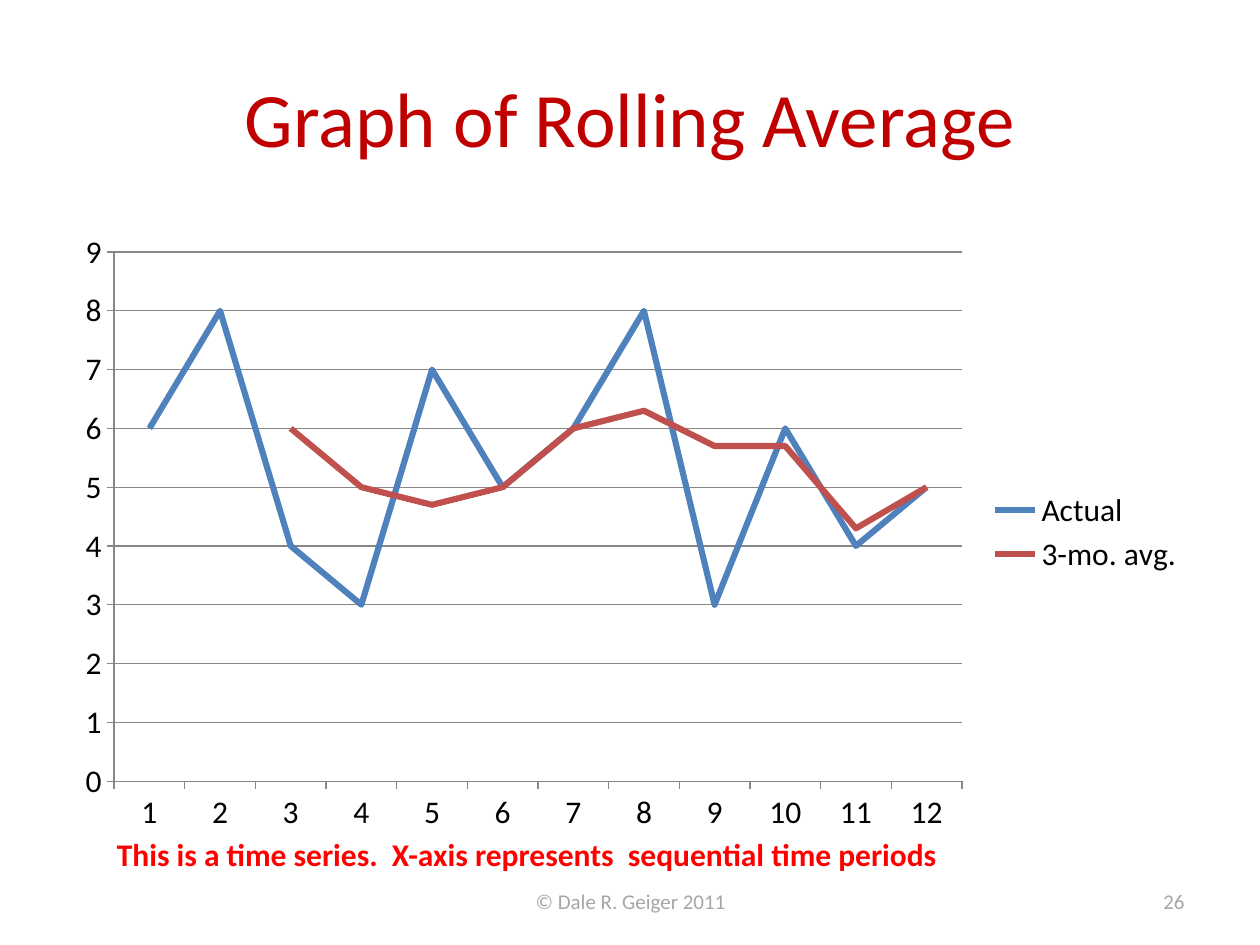
from pptx import Presentation
from pptx.chart.data import CategoryChartData
from pptx.dml.color import RGBColor
from pptx.enum.chart import XL_CHART_TYPE, XL_LEGEND_POSITION, XL_MARKER_STYLE, XL_TICK_MARK
from pptx.enum.text import MSO_ANCHOR, PP_ALIGN
from pptx.util import Inches, Pt

LINE = XL_CHART_TYPE.LINE
LEGEND_RIGHT = XL_LEGEND_POSITION.RIGHT
NO_MARK = XL_MARKER_STYLE.NONE
TICK_OUT, TICK_NONE = XL_TICK_MARK.OUTSIDE, XL_TICK_MARK.NONE
LEFT, CENTER, RIGHT = PP_ALIGN.LEFT, PP_ALIGN.CENTER, PP_ALIGN.RIGHT
MIDDLE = MSO_ANCHOR.MIDDLE

BLACK = RGBColor(0x00, 0x00, 0x00)
CRIMSON = RGBColor(0xC0, 0x00, 0x00)
RED = RGBColor(0xFF, 0x00, 0x00)
GRAY = RGBColor(0xA6, 0xA6, 0xA6)
AXIS = RGBColor(0x87, 0x87, 0x87)
BLUE = RGBColor(0x4F, 0x81, 0xBD)
BRICK = RGBColor(0xC0, 0x50, 0x4D)

SERIES = [
    ("Actual", [6, 8, 4, 3, 7, 5, 6, 8, 3, 6, 4, 5], BLUE),
    ("3-mo. avg.", [None, None, 6, 5, 4.7, 5, 6, 6.3, 5.7, 5.7, 4.3, 5], BRICK),
]


class Deck:
    font = "Calibri"

    def __init__(self):
        self.prs = Presentation()
        self.prs.slide_width, self.prs.slide_height = Inches(10), Inches(7.5)
        self.slide = self.prs.slides.add_slide(self.prs.slide_layouts[6])

    def style(self, font, size, color, bold=False):
        font.name, font.size, font.bold = self.font, Pt(size), bold
        font.color.rgb = color

    def text(self, box, words, size, color, align=LEFT, bold=False, wrap=True):
        frame = self.slide.shapes.add_textbox(*map(Inches, box)).text_frame
        frame.word_wrap = wrap
        frame.vertical_anchor = MIDDLE
        para = frame.paragraphs[0]
        para.text, para.alignment = words, align
        self.style(para.font, size, color, bold)

    def chart(self, box, cats, series, size):
        data = CategoryChartData()
        data.categories = cats
        for name, vals, _ in series:
            data.add_series(name, vals)
        chart = self.slide.shapes.add_chart(LINE, *map(Inches, box), data).chart
        self.style(chart.font, size, BLACK)
        chart.has_title = False
        chart.has_legend = True
        chart.legend.position = LEGEND_RIGHT
        chart.legend.include_in_layout = False
        plot = chart.plots[0]
        plot.vary_by_categories = False
        for line, (_, _, color) in zip(plot.series, series):
            line.smooth = False
            line.marker.style = NO_MARK
            line.format.line.width = Pt(3.5)
            line.format.line.color.rgb = color
        for axis in (chart.category_axis, chart.value_axis):
            axis.major_tick_mark, axis.minor_tick_mark = TICK_OUT, TICK_NONE
            axis.format.line.color.rgb = AXIS
        axis = chart.value_axis
        axis.minimum_scale, axis.maximum_scale, axis.major_unit = 0, 9, 1
        axis.has_major_gridlines = True
        axis.major_gridlines.format.line.color.rgb = AXIS


def main():
    deck = Deck()
    deck.text((0.5, 0.3, 9, 1.25), "Graph of Rolling Average", 44, CRIMSON, CENTER)
    deck.chart((0.5, 1.75, 9, 4.95), [str(n) for n in range(1, 13)], SERIES, 18)
    deck.text((3.42, 6.95, 3.17, 0.4), "© Dale R. Geiger 2011", 12, GRAY, CENTER)
    deck.text((7.17, 6.95, 2.33, 0.4), "26", 12, GRAY, RIGHT)
    deck.text((0.83, 6.58, 6.77, 0.4),
              "This is a time series.  X-axis represents  sequential time periods",
              18, RED, bold=True, wrap=False)
    deck.prs.save("out.pptx")


if __name__ == "__main__":
    main()
